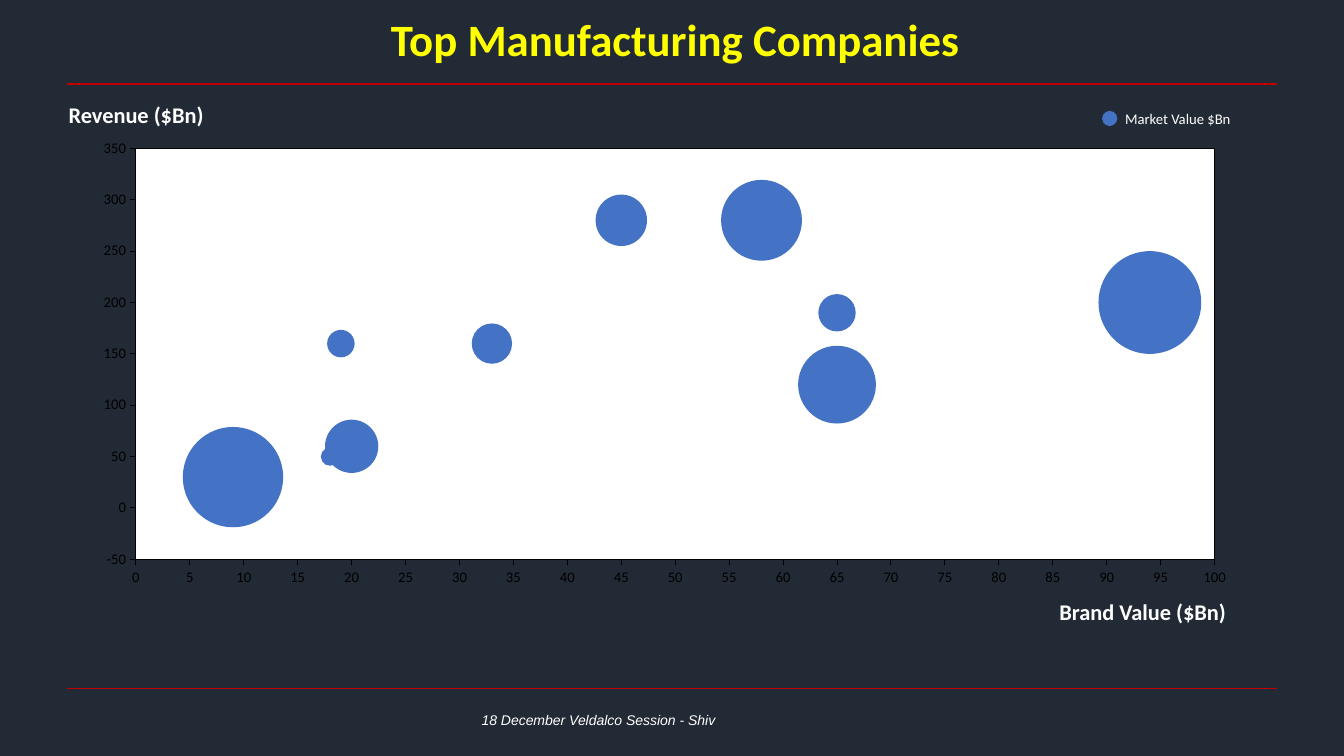
from dataclasses import dataclass

import pptx
import pptx.chart.data
import pptx.dml.color
import pptx.enum.chart
import pptx.enum.shapes
import pptx.enum.text
import pptx.oxml
import pptx.oxml.ns
import pptx.util

ALIGN = pptx.enum.text.PP_ALIGN
ANCHOR = pptx.enum.text.MSO_ANCHOR
SLIDE_WIDTH = pptx.util.Inches(13.33)
SLIDE_HEIGHT = pptx.util.Inches(7.5)


@dataclass(frozen=True)
class Theme:
    background: str = "222A35"
    rule: str = "C00000"
    title: str = "FFFF00"
    text: str = "FFFFFF"
    axis: str = "000000"
    plot: str = "FFFFFF"
    bubble: str = "4472C4"
    font: str = "Calibri"
    footer_font: str = "Arial"
    title_size: float = 32
    label_size: float = 16
    small_size: float = 10.5
    footer_size: float = 10


THEME = Theme()


@dataclass(frozen=True)
class Box:
    """Place on the slide, in percent of its width and height."""
    left: float
    top: float
    width: float
    height: float

    def lengths(self) -> tuple[int, int, int, int]:
        return (across(self.left), down(self.top), across(self.width), down(self.height))


@dataclass(frozen=True)
class Label:
    text: str
    box: Box
    size: float
    align: ALIGN
    anchor: ANCHOR
    font: str = THEME.font
    bold: bool = False
    italic: bool = False
    wrap: bool = False


@dataclass(frozen=True)
class Company:
    brand_value: float
    revenue: float
    market_value: float


@dataclass(frozen=True)
class Scale:
    minimum: float
    maximum: float
    step: float


TITLE = Label("Top Manufacturing Companies", Box(5.25, 0, 90, 11.07), THEME.title_size,
              ALIGN.CENTER, ANCHOR.MIDDLE, bold=True, wrap=True)
FOOTER = Label("18 December Veldalco Session - Shiv", Box(5.25, 91.47, 78.54, 7.47),
               THEME.footer_size, ALIGN.CENTER, ANCHOR.MIDDLE,
               font=THEME.footer_font, italic=True, wrap=True)
CHART_LABELS = [
    Label("Revenue ($Bn)", Box(5.1, 13.33, 10.05, 3.6), THEME.label_size,
          ALIGN.CENTER, ANCHOR.BOTTOM, bold=True),
    Label("Brand Value ($Bn)", Box(78.77, 79.07, 12.45, 3.6), THEME.label_size,
          ALIGN.RIGHT, ANCHOR.TOP, bold=True),
    Label("Market Value $Bn", Box(83.72, 14.53, 7.95, 2.4), THEME.small_size,
          ALIGN.LEFT, ANCHOR.MIDDLE),
]
RULE_ROWS = [11.11, 91.11]
CHART_BOX = Box(6.6, 18.13, 85.75, 60.27)
LEGEND_DOT = Box(82, 14.67, 1.13, 2)
PLOT_SHARES = {"x": 0.041, "y": 0.025, "w": 0.936, "h": 0.902}
BRAND_SCALE = Scale(0, 100, 5)
REVENUE_SCALE = Scale(-50, 350, 50)
COMPANIES = [
    Company(94, 200, 279), Company(65, 190, 37), Company(58, 280, 173),
    Company(45, 280, 70), Company(33, 160, 43), Company(20, 60, 75),
    Company(19, 160, 20), Company(9, 30, 266), Company(65, 120, 160),
    Company(18, 50, 9),
]


def across(percent: float) -> int:
    return round(SLIDE_WIDTH * percent / 100)


def down(percent: float) -> int:
    return round(SLIDE_HEIGHT * percent / 100)


def rgb(color: str) -> pptx.dml.color.RGBColor:
    return pptx.dml.color.RGBColor.from_string(color)


def write_label(shape, label: Label, color: str) -> None:
    frame = shape.text_frame
    frame.text = label.text
    frame.word_wrap = label.wrap
    frame.vertical_anchor = label.anchor
    paragraph = frame.paragraphs[0]
    paragraph.alignment = label.align
    font = paragraph.runs[0].font
    font.name, font.size = label.font, pptx.util.Pt(label.size)
    font.bold, font.italic = label.bold, label.italic
    font.color.rgb = rgb(color)


def add_label(slide, label: Label) -> None:
    shape = slide.shapes.add_textbox(*label.box.lengths())
    write_label(shape, label, THEME.text)
    if not label.wrap:
        frame = shape.text_frame
        frame.margin_left = frame.margin_right = frame.margin_top = frame.margin_bottom = 0


def add_rule(slide, row: float) -> None:
    rule = slide.shapes.add_connector(pptx.enum.shapes.MSO_CONNECTOR.STRAIGHT,
                                      across(5), down(row), across(95), down(row))
    rule.line.color.rgb = rgb(THEME.rule)
    rule.line.width = pptx.util.Pt(1)
    properties = rule._element.spPr
    properties.append(properties.makeelement(pptx.oxml.ns.qn("a:effectLst"), {}))


def format_axis(axis, scale: Scale) -> None:
    axis.minimum_scale, axis.maximum_scale = scale.minimum, scale.maximum
    axis.major_unit = scale.step
    axis.has_major_gridlines = axis.has_minor_gridlines = False
    axis.major_tick_mark = pptx.enum.chart.XL_TICK_MARK.OUTSIDE
    axis.minor_tick_mark = pptx.enum.chart.XL_TICK_MARK.NONE
    axis.crosses = pptx.enum.chart.XL_AXIS_CROSSES.MINIMUM
    axis.format.line.color.rgb = rgb(THEME.axis)
    axis.format.line.width = pptx.util.Pt(0.75)
    labels = axis.tick_labels
    labels.number_format = '#,##0;"-"#,##0'
    labels.number_format_is_linked = False
    labels.font.name, labels.font.size = THEME.font, pptx.util.Pt(THEME.small_size)
    labels.font.color.rgb = rgb(THEME.axis)


def format_plot_area(chart) -> None:
    area = chart._chartSpace.chart.plotArea
    namespaces = pptx.oxml.ns.nsdecls("c", "a")
    for layout in area.findall(pptx.oxml.ns.qn("c:layout")):
        area.remove(layout)
    modes = "".join(f'<c:{side}Mode val="edge"/>' for side in "xy")
    shares = "".join(f'<c:{side} val="{share}"/>' for side, share in PLOT_SHARES.items())
    area.insert(0, pptx.oxml.parse_xml(
        f'<c:layout {namespaces}><c:manualLayout><c:layoutTarget val="inner"/>'
        f'{modes}{shares}</c:manualLayout></c:layout>'))
    area.append(pptx.oxml.parse_xml(
        f'<c:spPr {namespaces}><a:solidFill><a:srgbClr val="{THEME.plot}"/></a:solidFill>'
        f'<a:ln w="9525"><a:solidFill><a:srgbClr val="{THEME.axis}"/></a:solidFill></a:ln>'
        f'</c:spPr>'))


def add_bubble_chart(slide) -> None:
    data = pptx.chart.data.BubbleChartData()
    companies = data.add_series("Series 1")
    for company in COMPANIES:
        companies.add_data_point(company.brand_value, company.revenue, company.market_value)
    chart = slide.shapes.add_chart(pptx.enum.chart.XL_CHART_TYPE.BUBBLE,
                                   *CHART_BOX.lengths(), data).chart
    chart.has_title = chart.has_legend = False
    chart.font.name, chart.font.size = THEME.font, pptx.util.Pt(10)
    chart.font.color.rgb = rgb(THEME.axis)
    bubbles = chart.plots[0].series[0].format
    bubbles.fill.solid()
    bubbles.fill.fore_color.rgb = rgb(THEME.bubble)
    bubbles.line.fill.background()
    format_axis(chart.category_axis, BRAND_SCALE)
    format_axis(chart.value_axis, REVENUE_SCALE)
    format_plot_area(chart)


def add_legend_dot(slide) -> None:
    dot = slide.shapes.add_shape(pptx.enum.shapes.MSO_SHAPE.OVAL, *LEGEND_DOT.lengths())
    dot.shadow.inherit = False
    dot.fill.solid()
    dot.fill.fore_color.rgb = rgb(THEME.bubble)
    dot.line.fill.background()


def main() -> None:
    presentation = pptx.Presentation()
    presentation.slide_width, presentation.slide_height = SLIDE_WIDTH, SLIDE_HEIGHT
    slide = presentation.slides.add_slide(presentation.slide_layouts[5])
    slide.background.fill.solid()
    slide.background.fill.fore_color.rgb = rgb(THEME.background)

    # Frame: rules, title and footer
    for row in RULE_ROWS:
        add_rule(slide, row)
    title = slide.shapes.title
    title.left, title.top, title.width, title.height = TITLE.box.lengths()
    write_label(title, TITLE, THEME.title)
    title.text_frame.paragraphs[0].line_spacing = 0.9
    add_label(slide, FOOTER)

    # Chart with its axis titles and legend
    add_bubble_chart(slide)
    add_legend_dot(slide)
    for label in CHART_LABELS:
        add_label(slide, label)
    presentation.save("out.pptx")


if __name__ == "__main__":
    main()
